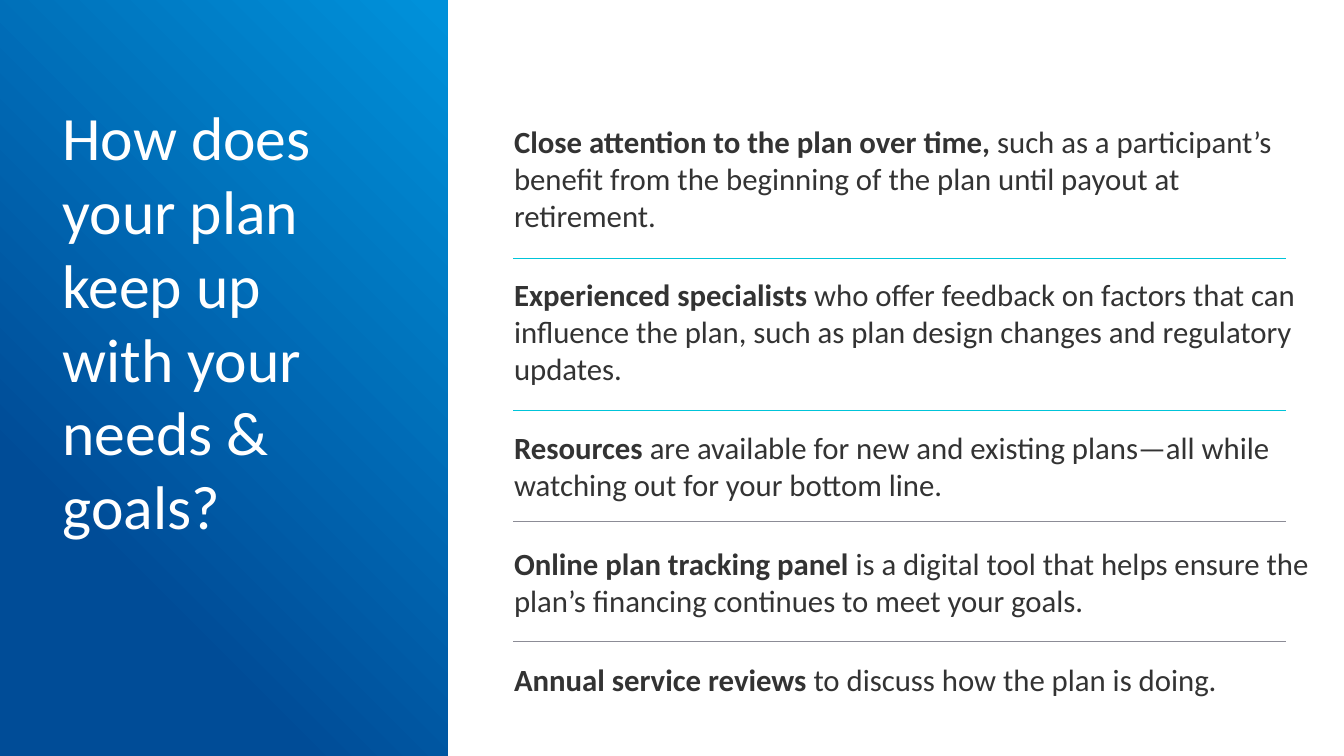
from pptx import Presentation
from pptx.dml.color import RGBColor
from pptx.enum.shapes import MSO_CONNECTOR, MSO_SHAPE
from pptx.enum.text import MSO_ANCHOR
from pptx.oxml.ns import qn
from pptx.util import Inches, Pt
from lxml import etree

RECT = MSO_SHAPE.RECTANGLE
STRAIGHT = MSO_CONNECTOR.STRAIGHT
TOP = MSO_ANCHOR.TOP

FONT = "Calibri"
COLORS = {
    "navy": "004C97",
    "blue": "0091DA",
    "white": "FFFFFF",
    "text": "333333",
    "teal": "00C4D9",
    "grey": "8C8C96",
}
TITLE = "How does your plan keep up with your needs & goals?"
POINTS = [
    ("Close attention to the plan over time, ",
     "such as a participant’s benefit from the beginning of the plan until payout at retirement."),
    ("Experienced specialists ",
     "who offer feedback on factors that can influence the plan, "
     "such as plan design changes and regulatory updates."),
    ("Resources",
     " are available for new and existing plans—all while watching out for your bottom line."),
    ("Online plan tracking panel ",
     "is a digital tool that helps ensure the plan’s financing continues to meet your goals."),
    ("Annual service reviews ", "to discuss how the plan is doing."),
]
DIVIDERS = [(2.56, "teal"), (4.07, "teal"), (5.17, "grey"), (6.36, "grey")]
DIVIDER_LEFT, DIVIDER_RIGHT = 5.09, 12.75
GRADIENT = [(0.25, "navy"), (0.99, "blue")]


def rgb(name):
    return RGBColor.from_string(COLORS[name])


def add_text_frame(slide, left, top, width, height):
    sp = slide.shapes.add_textbox(Inches(left), Inches(top), Inches(width), Inches(height))
    tf = sp.text_frame
    tf.word_wrap = True
    tf.vertical_anchor = TOP
    return tf


def set_font(p, size, color):
    p.font.name = FONT
    p.font.size = Pt(size)
    p.font.color.rgb = rgb(color)


def add_panel(slide):
    sp = slide.shapes.add_shape(RECT, 0, 0, Inches(4.44), Inches(7.5))
    sp.shadow.inherit = False
    sp.line.fill.background()
    sp.fill.gradient()
    sp.fill.gradient_angle = 45
    for stop, (position, color) in zip(sp.fill.gradient_stops, GRADIENT):
        stop.position = position
        stop.color.rgb = rgb(color)


def add_title(slide):
    tf = add_text_frame(slide, 0.62, 0.98, 3.11, 0.19)
    tf.margin_left = tf.margin_top = tf.margin_right = tf.margin_bottom = 0
    p = tf.paragraphs[0]
    p.text = TITLE
    set_font(p, 44, "white")


def add_points(slide):
    tf = add_text_frame(slide, 5, 1.17, 8.11, 5.86)
    for i, (lead, rest) in enumerate(POINTS):
        p = tf.add_paragraph() if i else tf.paragraphs[0]
        p.space_after = Pt(30)
        set_font(p, 22, "text")
        for text, bold in ((lead, True), (rest, False)):
            r = p.add_run()
            r.text = text
            r.font.bold = bold


def add_dividers(slide):
    for y, color in DIVIDERS:
        line = slide.shapes.add_connector(
            STRAIGHT, Inches(DIVIDER_LEFT), Inches(y), Inches(DIVIDER_RIGHT), Inches(y))
        line.line.color.rgb = rgb(color)
        line.line.width = Pt(0.75)
        etree.SubElement(line._element.spPr, qn("a:effectLst"))


def main():
    prs = Presentation()
    prs.slide_width, prs.slide_height = Inches(13.33), Inches(7.5)
    slide = prs.slides.add_slide(prs.slide_layouts[6])
    add_panel(slide)
    add_title(slide)
    add_points(slide)
    add_dividers(slide)
    prs.save("out.pptx")


if __name__ == "__main__":
    main()
